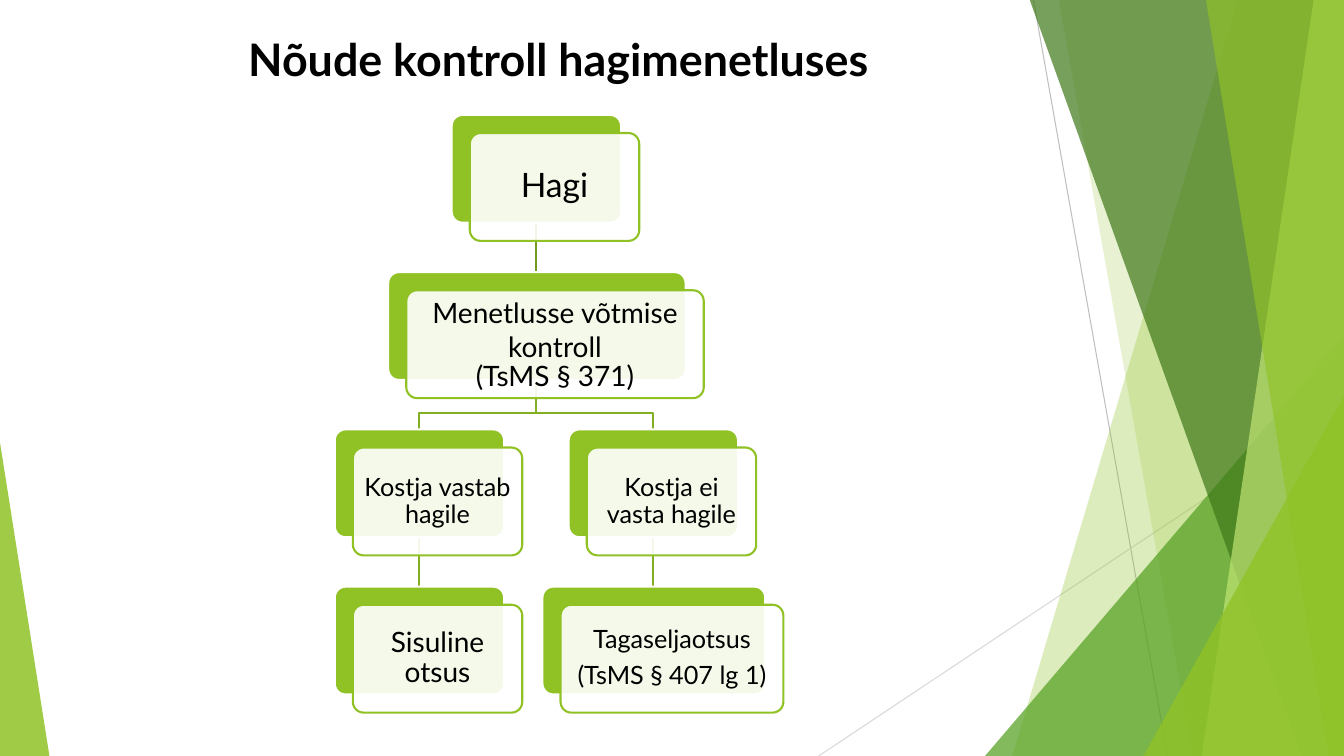
from dataclasses import dataclass

from lxml.etree import SubElement
from pptx import Presentation
from pptx.dml.color import RGBColor
from pptx.enum.shapes import MSO_CONNECTOR, MSO_SHAPE
from pptx.enum.text import MSO_ANCHOR, PP_ALIGN
from pptx.oxml.ns import qn
from pptx.util import Pt

PX = 9144
WIDTH, HEIGHT = 1333, 750


@dataclass(frozen=True)
class Theme:
    """Colours, font and type sizes of the deck."""
    font: str = "Lato"
    text: str = "000000"
    white: str = "FFFFFF"
    green: str = "90C226"
    mid_green: str = "54A021"
    dark_green: str = "3F7819"
    pale_green: str = "C0E474"
    root_link: str = "739B1E"
    link: str = "83B022"
    grey: str = "BFBFBF"
    light_grey: str = "D9D9D9"
    title: int = 32
    large: int = 24
    medium: int = 20
    small: int = 18


T = Theme()


def px(*lengths):
    """Turn px lengths into EMU."""
    return [round(n * PX) for n in lengths]


def paint(sp, fill=None, alpha=100, line=None, width=1.5):
    """Set fill, transparency and outline of a shape."""
    sp.shadow.inherit = False
    if fill:
        sp.fill.solid()
        sp.fill.fore_color.rgb = RGBColor.from_string(fill)
        if alpha < 100:
            clr = sp._element.spPr.find(qn("a:solidFill"))[0]
            SubElement(clr, qn("a:alpha")).set("val", str(alpha * 1000))
    else:
        sp.fill.background()
    if line:
        sp.line.color.rgb = RGBColor.from_string(line)
        sp.line.width = Pt(width)
    else:
        sp.line.fill.background()


def add_path(s, points, close=True, **look):
    """Draw a polygon or an open polyline through px points."""
    fb = s.shapes.build_freeform(*points[0], scale=PX)
    fb.add_line_segments(points[1:], close=close)
    paint(fb.convert_to_shape(), **look)


def add_line(s, x1, y1, x2, y2, color, width):
    """Draw a straight line without a shadow."""
    c = s.shapes.add_connector(MSO_CONNECTOR.STRAIGHT, *px(x1, y1, x2, y2))
    c.line.color.rgb = RGBColor.from_string(color)
    c.line.width = Pt(width)
    SubElement(c._element.spPr, qn("a:effectLst"))


def add_triangle(s, box, apex, fill, alpha):
    """Draw a right triangle whose apex lies at the given share of its width."""
    sp = s.shapes.add_shape(MSO_SHAPE.ISOSCELES_TRIANGLE, *px(*box))
    sp.adjustments[0] = apex
    paint(sp, fill, alpha)


def write(sp, lines, size, bold=False, inset=None, spacing=None, after=()):
    """Write centred paragraphs into a shape."""
    tf = sp.text_frame
    tf.word_wrap = True
    if inset is not None:
        tf.vertical_anchor = MSO_ANCHOR.MIDDLE
        tf.margin_left = tf.margin_top = tf.margin_right = tf.margin_bottom = px(inset)[0]
    for i, line in enumerate(lines):
        p = tf.paragraphs[0] if i == 0 else tf.add_paragraph()
        p.alignment = PP_ALIGN.CENTER
        if spacing:
            p.line_spacing = spacing[i]
            p.space_after = Pt(after[i])
        r = p.add_run()
        r.text = line
        r.font.name, r.font.size, r.font.bold = T.font, Pt(size), bold
        r.font.color.rgb = RGBColor.from_string(T.text)


def add_facets(s, x, y, w, h):
    """Draw the layered green facets along the slide edges."""
    right, bottom = x + w, y + h

    def facet(top, foot, fill, alpha):
        """Draw a band from a slanted left edge to the right edge."""
        add_path(s, [(x + top, y - 1), (right, y - 1), (right, bottom), (x + foot, bottom)],
                 fill=fill, alpha=alpha)

    def corner(cw, ch, fill, alpha):
        """Draw a triangle in the lower right corner."""
        add_triangle(s, (right - cw, bottom - ch, cw, ch), 1, fill, alpha)

    add_line(s, x + 1025, y, x + 1158, bottom, T.grey, 0.75)
    add_line(s, right, y + 403, x + 812, bottom, T.light_grey, 0.75)
    facet(1228, 1004, T.green, 30)
    facet(1050, 1183, T.green, 20)
    corner(356, 417, T.mid_green, 72)
    facet(1021, 1291, T.dark_green, 70)
    facet(1303, 1192, T.pale_green, 70)
    facet(1196, 1318, T.green, 65)
    corner(199, 357, T.green, 80)
    add_triangle(s, (x, bottom - 311, 49, 311), 0, T.green, 85)


def add_card(s, x, y, w, h, lines, size, inset, first_tight=False):
    """Draw a green card with an offset translucent card that holds the text."""
    shift = 18
    for dx, look in ((0, dict(fill=T.green, line=T.white)),
                     (shift, dict(fill=T.white, alpha=90, line=T.green))):
        sp = s.shapes.add_shape(MSO_SHAPE.ROUNDED_RECTANGLE, *px(x + dx, y + dx, w, h))
        sp.adjustments[0] = 0.1
        paint(sp, **look)
    spacing, after = [0.9] * len(lines), [size * 0.35] * len(lines)
    if first_tight:
        spacing[0], after[0] = 1.0, 0
    write(sp, lines, size, inset=inset, spacing=spacing, after=after)


def add_tree(s, x, y, w, h):
    """Draw the claim review tree with its links behind the cards."""
    card_h = 107
    pitch = (h - card_h) // 3
    left, mid, right = x + 85, x + w // 2 - 22, x + 317
    tops = [y + row * pitch for row in range(4)]
    for cx, row, color in ((right, 2, T.link), (left, 2, T.link), (mid, 0, T.root_link)):
        add_line(s, cx, tops[row] + card_h, cx, tops[row + 1], color, 1.5)
    for cx in (right, left):
        bend = tops[2] - 16
        add_path(s, [(mid, tops[1] + card_h), (mid, bend), (cx, bend), (cx, tops[2])],
                 close=False, line=T.link)
    cards = [
        (mid, 0, 168, ["Hagi"], T.large, 10, False),
        (mid, 1, 295, ["Menetlusse võtmise kontroll", "(TsMS § 371)"], T.medium, 8, True),
        (left, 2, 168, ["Kostja vastab hagile"], T.small, 7, False),
        (left, 3, 168, ["Sisuline otsus"], T.medium, 8, False),
        (right, 2, 168, ["Kostja ei vasta hagile"], T.small, 7, False),
        (right, 3, 221, ["Tagaseljaotsus", "(TsMS § 407 lg 1)"], T.small, 7, False),
    ]
    for cx, row, cw, lines, size, inset, tight in cards:
        add_card(s, cx - cw // 2, tops[row], cw, card_h, lines, size, inset, tight)


def add_title(s, x, y, w, h):
    """Place the slide title."""
    sp = s.shapes.add_textbox(*px(x, y, w, h))
    write(sp, ["Nõude kontroll hagimenetluses"], T.title, bold=True)


def main():
    """Build the slide and save it."""
    prs = Presentation()
    prs.slide_width, prs.slide_height = px(WIDTH, HEIGHT)
    s = prs.slides.add_slide(prs.slide_layouts[6])
    add_facets(s, 0, 0, WIDTH, HEIGHT)
    add_tree(s, 331, 114, 446, 575)
    add_title(s, 210, 27, 688, 64)
    prs.save("out.pptx")


if __name__ == "__main__":
    main()
